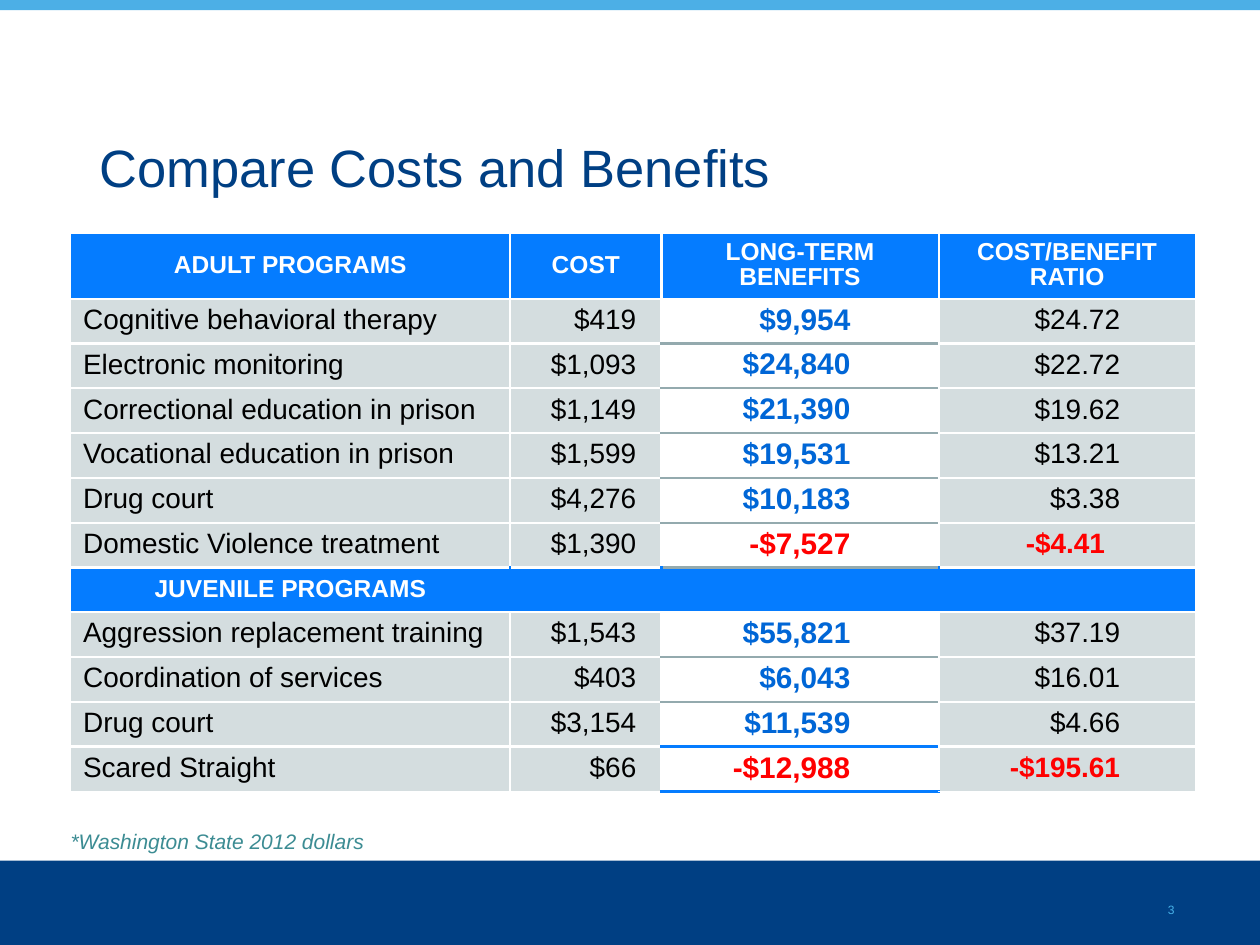
from dataclasses import dataclass

from lxml import etree
from pptx import Presentation, util as u
from pptx.dml.color import RGBColor
from pptx.enum import shapes, text
from pptx.oxml.ns import qn

LEFT, MID, RIGHT = text.PP_ALIGN.LEFT, text.PP_ALIGN.CENTER, text.PP_ALIGN.RIGHT


@dataclass(frozen=True)
class Theme:
    font: str = "Arial"
    navy: str = "003F83"
    sky: str = "4CAFE6"
    page: str = "46B0E7"
    teal: str = "3C8C93"
    blue: str = "057CFF"
    gain: str = "0066D6"
    loss: str = "FF0000"
    pale: str = "D4DDDF"
    grey: str = "94AAAE"
    white: str = "FFFFFF"
    black: str = "000000"
    title: int = 30
    key: int = 17
    body: int = 16
    head: int = 14
    note: int = 12


HEAD = ["ADULT PROGRAMS", "COST", "LONG-TERM BENEFITS", "COST/BENEFIT RATIO"]
ADULT = [
    ["Cognitive behavioral therapy", "$419", "$9,954", "$24.72"],
    ["Electronic monitoring", "$1,093", "$24,840", "$22.72"],
    ["Correctional education in prison", "$1,149", "$21,390", "$19.62"],
    ["Vocational education in prison", "$1,599", "$19,531", "$13.21"],
    ["Drug court", "$4,276", "$10,183", "$3.38"],
    ["Domestic Violence treatment", "$1,390", "-$7,527", "-$4.41"],
]
BREAK = ["JUVENILE PROGRAMS", "", "", ""]
YOUTH = [
    ["Aggression replacement training", "$1,543", "$55,821", "$37.19"],
    ["Coordination of services", "$403", "$6,043", "$16.01"],
    ["Drug court", "$3,154", "$11,539", "$4.66"],
    ["Scared Straight", "$66", "-$12,988", "-$195.61"],
]
ROWS = [HEAD, *ADULT, BREAK, *YOUTH]
SPLIT = ROWS.index(BREAK)
KEY = 2
INSET = [0.1, 0.2, 0.7, 0.6]
SHIFT = {(SPLIT - 1, 3): 0.72}


class Deck:
    def __init__(self, theme, cols=100, rows=75):
        self.theme = theme
        self.prs = Presentation()
        self.prs.slide_width, self.prs.slide_height = u.Inches(10), u.Inches(7.5)
        self.cols, self.rows = cols, rows
        self.slide = self.prs.slides.add_slide(self.prs.slide_layouts[5])

    def wide(self, n):
        return round(self.prs.slide_width * n / self.cols)

    def high(self, n):
        return round(self.prs.slide_height * n / self.rows)

    def box(self, x, y, w, h):
        return self.wide(x), self.high(y), self.wide(w), self.high(h)

    def style(self, frame, words, size, color, bold=False, italic=False, align=LEFT):
        frame.text = words
        para = frame.paragraphs[0]
        para.alignment = align
        for run in para.runs:
            font = run.font
            font.name, font.size = self.theme.font, u.Pt(size)
            font.bold, font.italic = bold, italic
            font.color.rgb = RGBColor.from_string(color)
        return para

    def band(self, y, h, color):
        bar = self.slide.shapes.add_shape(
            shapes.MSO_SHAPE.RECTANGLE, *self.box(0, y, self.cols, h))
        bar.shadow.inherit = False
        bar.fill.solid()
        bar.fill.fore_color.rgb = RGBColor.from_string(color)
        bar.line.fill.background()

    def title(self, words, *spot):
        hold = self.slide.shapes.title
        hold.left, hold.top, hold.width, hold.height = self.box(*spot)
        frame = hold.text_frame
        frame.auto_size = text.MSO_AUTO_SIZE.NONE
        frame.vertical_anchor = text.MSO_ANCHOR.MIDDLE
        self.style(frame, words, self.theme.title, self.theme.navy)

    def label(self, words, color, *spot, italic=False, pad=0.1):
        frame = self.slide.shapes.add_textbox(*self.box(*spot)).text_frame
        frame.word_wrap = True
        frame.margin_left = frame.margin_right = u.Inches(pad)
        return self.style(frame, words, self.theme.note, color, italic=italic)

    def sub(self, para):
        for props in para._p.iter(qn("a:rPr")):
            props.set("baseline", "-25000")

    def edge(self, cell, side, color, width):
        props = cell._tc.get_or_add_tcPr()
        line = etree.SubElement(props, qn(f"a:ln{side}"), w=str(u.Pt(width)))
        fill = etree.SubElement(line, qn("a:solidFill"))
        etree.SubElement(fill, qn("a:srgbClr"), val=color)

    def rule(self, row, col):
        t, last = self.theme, len(ROWS)
        if col == KEY and row >= last - 1:
            return t.blue, 2.25
        if col == KEY and row not in (0, 1, SPLIT + 1):
            return t.grey, 1.5
        return t.white, 1 if row in (0, last) else 1.5

    def post(self, row, col):
        if col in (0, len(HEAD)):
            return self.theme.white, 1
        return self.theme.blue if row == SPLIT else self.theme.white, 1.5

    def cell(self, cell, row, col):
        t, words = self.theme, ROWS[row][col]
        self.edge(cell, "L", *self.post(row, col))
        self.edge(cell, "R", *self.post(row, col + 1))
        self.edge(cell, "T", *self.rule(row, col))
        self.edge(cell, "B", *self.rule(row + 1, col))
        head = row in (0, SPLIT)
        loss, key = words.startswith("-"), col == KEY
        if head:
            fill, size, color, align = t.blue, t.head, t.white, MID
        else:
            fill = t.white if key else t.pale
            size = t.key if key else t.body
            color = t.loss if loss else t.gain if key else t.black
            align = RIGHT if col else LEFT
            cell.margin_right = u.Inches(SHIFT.get((row, col), INSET[col]))
        cell.fill.solid()
        cell.fill.fore_color.rgb = RGBColor.from_string(fill)
        cell.vertical_anchor = text.MSO_ANCHOR.MIDDLE
        para = self.style(cell.text_frame, words, size, color,
                          bold=head or key or loss, align=align)
        para.line_spacing = 0.9
        if not words:
            etree.SubElement(para._p, qn("a:endParaRPr"), sz=str(size * 100))

    def table(self, x, y, wides, first, rest):
        count = len(ROWS)
        spot = self.box(x, y, sum(wides), first + rest * (count - 1))
        grid = self.slide.shapes.add_table(count, len(wides), *spot).table
        grid.first_row = grid.horz_banding = False
        for col, wide in zip(grid.columns, wides):
            col.width = self.wide(wide)
        for i, row in enumerate(grid.rows):
            row.height = self.high(rest if i else first)
            for j, cell in enumerate(row.cells):
                self.cell(cell, i, j)


def main():
    t = Theme()
    deck = Deck(t)
    deck.band(68.3, 6.7, t.navy)
    deck.band(0, 0.8, t.sky)
    deck.sub(deck.label("3", t.page, 91.7, 70, 3.4, 2.3))
    deck.title("Compare Costs and Benefits", 6.9, 8.9, 90.8, 8.6)
    deck.label("*Washington State 2012 dollars", t.teal,
               5.6, 65.3, 42.8, 3, italic=True, pad=0)
    deck.table(5.6, 18.5, [34.9, 12, 22, 20.4], 5.15, 3.55)
    deck.prs.save("out.pptx")


if __name__ == "__main__":
    main()
